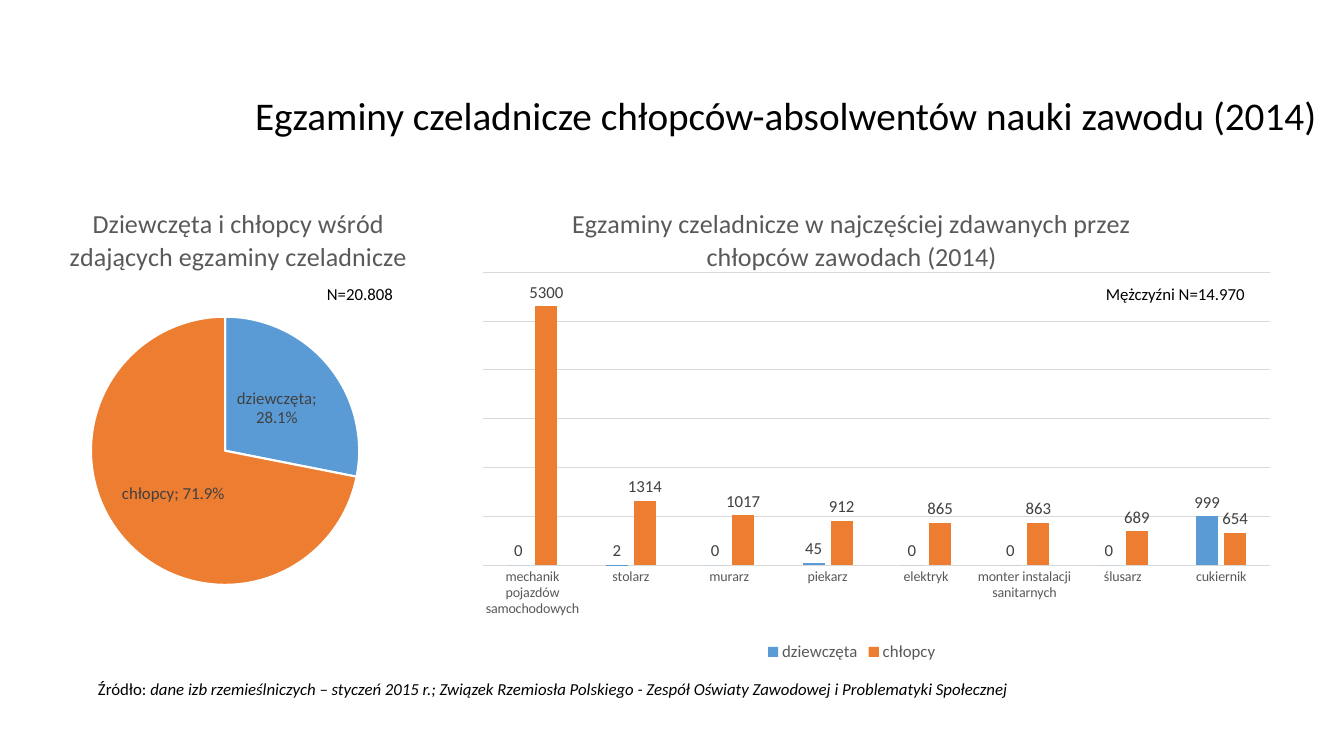
from lxml.etree import SubElement
from pptx import Presentation
from pptx.chart.data import CategoryChartData
from pptx.dml.color import RGBColor
from pptx.enum.chart import XL_CHART_TYPE, XL_LABEL_POSITION, XL_LEGEND_POSITION, XL_TICK_MARK
from pptx.enum.text import MSO_ANCHOR, PP_ALIGN
from pptx.oxml import parse_xml
from pptx.oxml.ns import nsdecls, qn
from pptx.util import Pt

EMU_PER_PX = 914400 / 100.8
FONT = "Calibri"
BLACK, DARK, GREY, RULE = "000000", "404040", "595959", "D9D9D9"
GENDERS = {"dziewczęta": "5B9BD5", "chłopcy": "ED7D31"}
SHARES = [0.281, 0.719]
EXAMS = {
    "mechanik pojazdów samochodowych": (0, 5300),
    "stolarz": (2, 1314),
    "murarz": (0, 1017),
    "piekarz": (45, 912),
    "elektryk": (0, 865),
    "monter instalacji sanitarnych": (0, 863),
    "ślusarz": (0, 689),
    "cukiernik": (999, 654),
}


def px(length):
    """Turn pixels into EMU."""
    return round(length * EMU_PER_PX)


def color(value):
    """Turn a hex string into a colour."""
    return RGBColor.from_string(value)


def style(font, size, value, italic=None):
    """Set family, size, colour and slant of a font."""
    font.name, font.size, font.italic, font.bold = FONT, Pt(size), italic, False
    font.color.rgb = color(value)


def add_run(paragraph, text, size, italic=None):
    """Append one black run."""
    run = paragraph.add_run()
    run.text = text
    style(run.font, size, BLACK, italic)


def add_title(slide, box, text):
    """Place and fill the title placeholder."""
    title = slide.shapes.title
    title.left, title.top, title.width, title.height = map(px, box)
    title.text_frame.vertical_anchor = MSO_ANCHOR.MIDDLE
    paragraph = title.text_frame.paragraphs[0]
    paragraph.alignment = PP_ALIGN.LEFT
    add_run(paragraph, text, 28)


def add_note(slide, box, runs):
    """Add a one-line text box made of (text, italic) runs."""
    frame = slide.shapes.add_textbox(*map(px, box)).text_frame
    frame.word_wrap = False
    for text, italic in runs:
        add_run(frame.paragraphs[0], text, 12, italic)


def set_plot_box(chart, fractions):
    """Fix the inner plot area as fractions of the chart."""
    plot_area = chart._chartSpace.chart.plotArea
    for old in plot_area.findall(qn("c:layout")):
        plot_area.remove(old)
    layout = parse_xml(f"<c:layout {nsdecls('c')}/>")
    manual = SubElement(layout, qn("c:manualLayout"))
    settings = [("layoutTarget", "inner"), ("xMode", "edge"), ("yMode", "edge")]
    for tag, value in settings + list(zip("xywh", fractions)):
        SubElement(manual, qn(f"c:{tag}")).set("val", str(value))
    plot_area.insert(0, layout)


def add_chart(slide, box, kind, data, title, plot_box):
    """Add a chart with its heading and plot area."""
    chart = slide.shapes.add_chart(kind, *map(px, box), data).chart
    style(chart.font, 10, BLACK)
    chart.has_title = True
    chart.chart_title.include_in_layout = False
    run = chart.chart_title.text_frame.paragraphs[0].add_run()
    run.text = title
    style(run.font, 18.6, GREY)
    set_plot_box(chart, plot_box)
    return chart


def add_share_pie(slide, box):
    """Draw the pie of girls and boys."""
    data = CategoryChartData(number_format="0.0%")
    data.categories = list(GENDERS)
    data.add_series("Series 1", SHARES)
    chart = add_chart(slide, box, XL_CHART_TYPE.PIE, data,
                      "Dziewczęta i chłopcy wśród zdających egzaminy czeladnicze",
                      (0.17, 0.3, 0.6, 0.63))
    chart.has_legend = False
    plot = chart.plots[0]
    plot.has_data_labels = True
    labels = plot.data_labels
    labels.show_category_name = labels.show_value = True
    labels.show_percentage = False
    labels.number_format, labels.number_format_is_linked = "0.0%", False
    labels.position = XL_LABEL_POSITION.CENTER
    style(labels.font, 12, DARK)
    separator = parse_xml(f"<c:separator {nsdecls('c')}>; </c:separator>")
    labels._element.find(qn("c:showBubbleSize")).addnext(separator)
    for index, fill in enumerate(GENDERS.values()):
        slice_format = plot.series[0].points[index].format
        slice_format.fill.solid()
        slice_format.fill.fore_color.rgb = color(fill)
        slice_format.line.color.rgb = color("FFFFFF")
        slice_format.line.width = Pt(1.5)


def add_exam_columns(slide, box):
    """Draw the columns of exams by trade."""
    data = CategoryChartData()
    data.categories = list(EXAMS)
    for name, values in zip(GENDERS, zip(*EXAMS.values())):
        data.add_series(name, values)
    chart = add_chart(slide, box, XL_CHART_TYPE.COLUMN_CLUSTERED, data,
                      "Egzaminy czeladnicze w najczęściej zdawanych przez chłopców zawodach (2014)",
                      (0.06, 0.18, 0.94, 0.61))
    plot = chart.plots[0]
    plot.gap_width, plot.overlap, plot.vary_by_categories = 219, -27, False
    for series, fill in zip(plot.series, GENDERS.values()):
        series.invert_if_negative = False
        series.format.fill.solid()
        series.format.fill.fore_color.rgb = color(fill)
        series.data_labels.show_value = True
        series.data_labels.position = XL_LABEL_POSITION.OUTSIDE_END
        style(series.data_labels.font, 12, DARK)
    values, trades = chart.value_axis, chart.category_axis
    values.visible = False
    values.minimum_scale, values.maximum_scale, values.major_unit = 0, 6000, 1000
    trades.major_tick_mark = XL_TICK_MARK.NONE
    style(trades.tick_labels.font, 10, GREY)
    for line in (values.major_gridlines.format.line, trades.format.line):
        line.color.rgb = color(RULE)
        line.width = Pt(0.75)
    chart.has_legend = True
    chart.legend.position = XL_LEGEND_POSITION.BOTTOM
    chart.legend.include_in_layout = False
    style(chart.legend.font, 12, GREY)


def main():
    """Build and save the slide."""
    presentation = Presentation()
    presentation.slide_width, presentation.slide_height = px(1344), px(756)
    slide = presentation.slides.add_slide(presentation.slide_layouts[5])
    add_title(slide, (245, 42, 1159, 146),
              "Egzaminy czeladnicze chłopców-absolwentów nauki zawodu (2014)")
    add_exam_columns(slide, (433, 186, 838, 480))
    add_share_pie(slide, (15, 187, 447, 429))
    add_note(slide, (88, 674, 940, 50), [
        ("Źródło: ", None),
        ("dane izb rzemieślniczych – styczeń 2015 r.; Związek Rzemiosła Polskiego - "
         "Zespół Oświaty Zawodowej i Problematyki Społecznej", True)])
    add_note(slide, (317, 279, 88, 30), [("N=20.808", None)])
    add_note(slide, (1096, 279, 160, 30), [("Mężczyźni N=14.970", None)])
    presentation.save("out.pptx")


if __name__ == "__main__":
    main()
